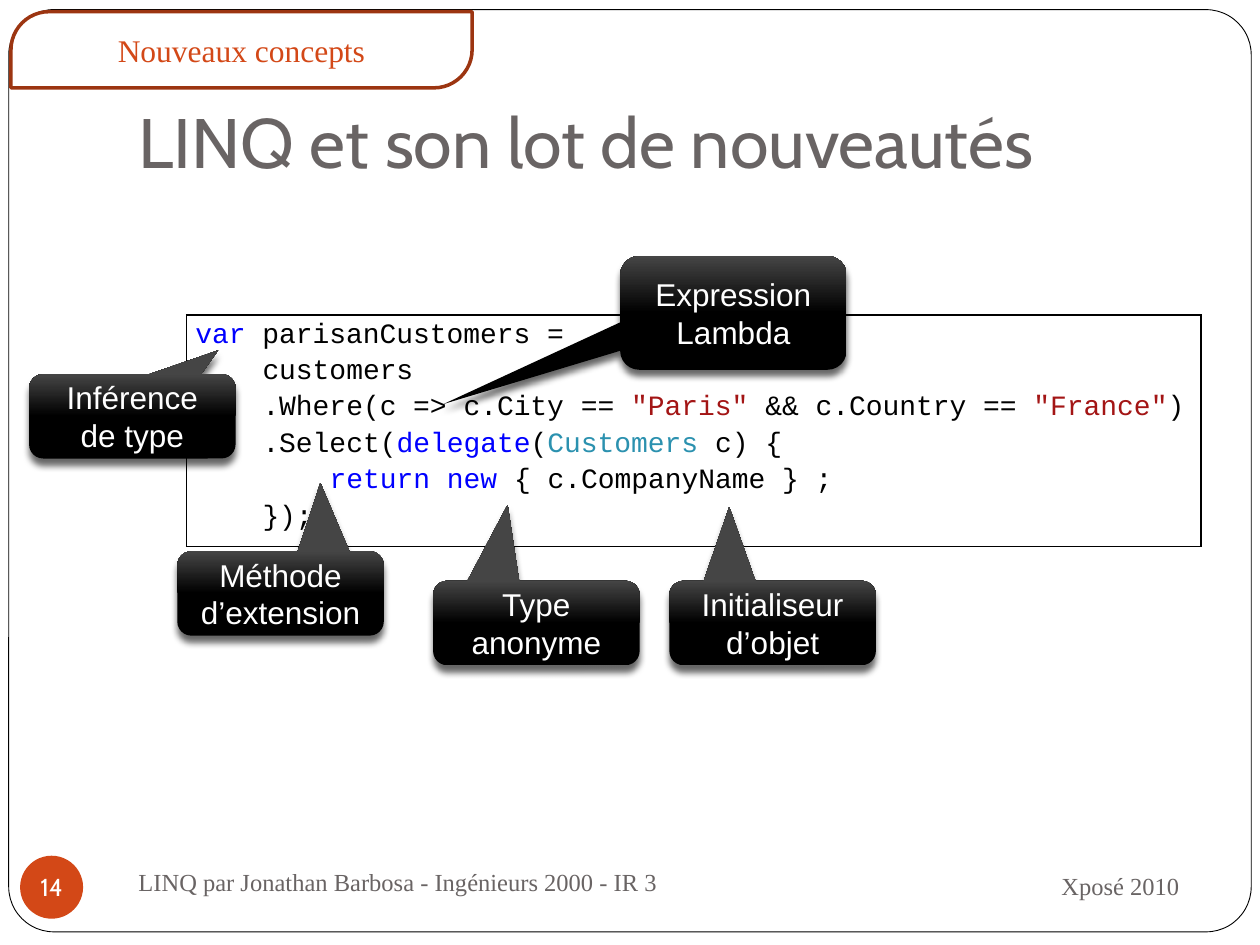
from dataclasses import dataclass

from lxml import etree
from pptx import Presentation
from pptx.dml.color import RGBColor
from pptx.enum import shapes, text
from pptx.oxml import ns
from pptx.util import Pt


@dataclass(frozen=True)
class Theme:
    grey: str = "696464"
    accent: str = "D34817"
    dark_accent: str = "9C3511"
    black: str = "000000"
    sheen: str = "454545"
    white: str = "FFFFFF"
    keyword: str = "0000FF"
    string: str = "A31515"
    type_name: str = "2B91AF"
    heading: str = "Cabin"
    serif: str = "Times New Roman"
    sans: str = "Arial"
    mono: str = "Courier New"
    title_size: int = 40
    label_size: int = 18
    code_size: int = 16
    small_size: int = 14


T = Theme()
SHAPE = shapes.MSO_SHAPE
ALIGN = text.PP_ALIGN
ANCHOR = text.MSO_ANCHOR
CHAR = 0.6 * T.code_size  # advance of one monospaced character


def rgb(value):
    return RGBColor.from_string(value)


def add_xml(parent, tag, **attrs):
    return etree.SubElement(parent, ns.qn(tag), {k: str(v) for k, v in attrs.items()})


def style_run(r, font, size, color):
    for name, value in {"name": font, "size": Pt(size)}.items():
        setattr(r.font, name, value)
    r.font.color.rgb = rgb(color)


def write(sp, words, font, size, color, align=ALIGN.LEFT, **frame):
    tf = sp.text_frame
    settings = {"word_wrap": True, "vertical_anchor": ANCHOR.MIDDLE, **frame}
    for name, value in settings.items():
        setattr(tf, name, value)
    p = tf.paragraphs[0]
    p.alignment = align
    r = p.add_run()
    r.text = words
    style_run(r, font, size, color)


def add_text(s, box, *args, **kwargs):
    write(s.shapes.add_textbox(*map(Pt, box)), *args, **kwargs)


def add_box(s, kind, box, adj=(), fill=None, line=None, width=1):
    sp = s.shapes.add_shape(kind, *map(Pt, box))
    sp.shadow.inherit = False
    for i, value in enumerate(adj):
        sp.adjustments[i] = value
    if fill:
        sp.fill.solid()
        sp.fill.fore_color.rgb = rgb(fill)
    else:
        sp.fill.background()
    if line:
        sp.line.color.rgb = rgb(line)
        sp.line.width = Pt(width)
    else:
        sp.line.fill.background()
    return sp


def add_frame(s, box):
    add_box(s, SHAPE.ROUNDED_RECTANGLE, box, [0.049], T.white, T.black, 0.5)


def add_tab(s, box, words):
    add_box(s, SHAPE.ROUND_2_DIAG_RECTANGLE, box, [0.5, 0], line=T.dark_accent, width=2)
    add_text(s, box, words, T.serif, T.label_size, T.accent, ALIGN.CENTER)


def add_code(s, box, lines):
    """One-cell table; each line is (indent in characters, coloured runs)."""
    table = s.shapes.add_table(1, 1, *map(Pt, box)).table
    table.first_row = table.horz_banding = False
    cell = table.cell(0, 0)
    margins = {"margin_left": 5, "margin_right": 5, "margin_top": 0, "margin_bottom": 0}
    for name, value in margins.items():
        setattr(cell, name, Pt(value))
    cell.fill.solid()
    cell.fill.fore_color.rgb = rgb(T.white)

    # Cell borders come before the fill
    tc_pr = cell._tc.get_or_add_tcPr()
    for i, side in enumerate("LRTB"):
        ln = add_xml(tc_pr, f"a:ln{side}", w=Pt(1))
        add_xml(add_xml(ln, "a:solidFill"), "a:srgbClr", val=T.black)
        tc_pr.insert(i, ln)

    tf = cell.text_frame
    for i, (indent, runs) in enumerate(lines):
        p = tf.add_paragraph() if i else tf.paragraphs[0]
        p.line_spacing = 1.15
        p._p.get_or_add_pPr().set("marL", str(Pt(indent * CHAR)))
        for words, color in runs:
            r = p.add_run()
            r.text = words
            style_run(r, T.mono, T.code_size, color)


def add_callout(s, box, tip, words):
    sp = add_box(s, SHAPE.ROUNDED_RECTANGULAR_CALLOUT, box, [*tip, 0.167])

    # Black body with a sheen at the top
    sp.fill.gradient()
    sp.fill.gradient_angle = 90
    stops = sp._element.spPr.find(".//" + ns.qn("a:gsLst"))
    for old in list(stops):
        stops.remove(old)
    for pos, color in ((0, T.black), (50, T.black), (100, T.sheen)):
        add_xml(add_xml(stops, "a:gs", pos=pos * 1000), "a:srgbClr", val=color)

    # Soft shadow below
    effects = sp._element.spPr.find(ns.qn("a:effectLst"))
    shadow = add_xml(effects, "a:outerShdw", blurRad=Pt(4), dist=Pt(4),
                     dir=90 * 60000, rotWithShape=0)
    add_xml(add_xml(shadow, "a:srgbClr", val=T.black), "a:alpha", val=60000)
    write(sp, words, T.sans, T.label_size, T.white, ALIGN.CENTER)


def add_footer(s, box, author, event, number):
    left, top, width, height = box
    style = (T.serif, T.small_size, T.grey)
    add_text(s, (left + 60.5, top, 312, 36), author, *style)
    add_text(s, (left + width - 195, top + 1.5, 195, 37.5), event, *style, ALIGN.RIGHT)
    badge = add_box(s, SHAPE.OVAL, (left, top + 3, 36, 36), fill=T.accent)
    margins = {f"margin_{side}": 0 for side in ("left", "right", "top", "bottom")}
    write(badge, number, T.heading, T.small_size, T.white, ALIGN.CENTER,
          **{**margins, "word_wrap": False})


CODE = [
    (0, [("var", T.keyword), (" parisanCustomers =", T.black)]),
    (4, [("customers", T.black)]),
    (4, [(".Where(c => c.City == ", T.black), ('"Paris"', T.string),
         (" && c.Country == ", T.black), ('"France"', T.string), (")", T.black)]),
    (4, [(".Select(", T.black), ("delegate", T.keyword), ("(", T.black),
         ("Customers ", T.type_name), ("c) {", T.black)]),
    (8, [("return new", T.keyword), (" { c.CompanyName } ;", T.black)]),
    (4, [("});", T.black)]),
]

SMALL = (118, 48.25)
CALLOUTS = [  # left, top, size, tip offset, label
    (16.6, 213.8, SMALL, (0.415, -0.78), "Inférence de type"),
    (101.3, 315, SMALL, (0.193, -1.31), "Méthode d’extension"),
    (247.5, 331.9, SMALL, (-0.139, -1.4), "Type anonyme"),
    (382.5, 331.9, SMALL, (-0.21, -1.375), "Initialiseur d’objet"),
    (354.4, 146.3, (129.4, 65), (-1.28, 0.801), "Expression Lambda"),
]


def main():
    prs = Presentation()
    prs.slide_width, prs.slide_height = Pt(720), Pt(540)
    s = prs.slides.add_slide(prs.slide_layouts[6])

    # Frame, section tab and title
    add_frame(s, (5, 5.5, 710, 527))
    add_tab(s, (6.3, 6.7, 263.5, 43.5), "Nouveaux concepts")
    add_text(s, (72, 21.6, 612, 90), "LINQ et son lot de nouveautés", T.heading,
             T.title_size, T.grey, vertical_anchor=ANCHOR.BOTTOM, margin_bottom=Pt(7.2))

    # Annotated code
    add_code(s, (106.6, 180, 579.6, 125), CODE)
    for left, top, size, tip, label in CALLOUTS:
        add_callout(s, (left, top, *size), tip, label)

    # Footer
    add_footer(s, (11.5, 486, 669.5, 39),
               "LINQ par Jonathan Barbosa - Ingénieurs 2000 - IR 3", "Xposé 2010", "14")
    prs.save("out.pptx")


if __name__ == "__main__":
    main()
